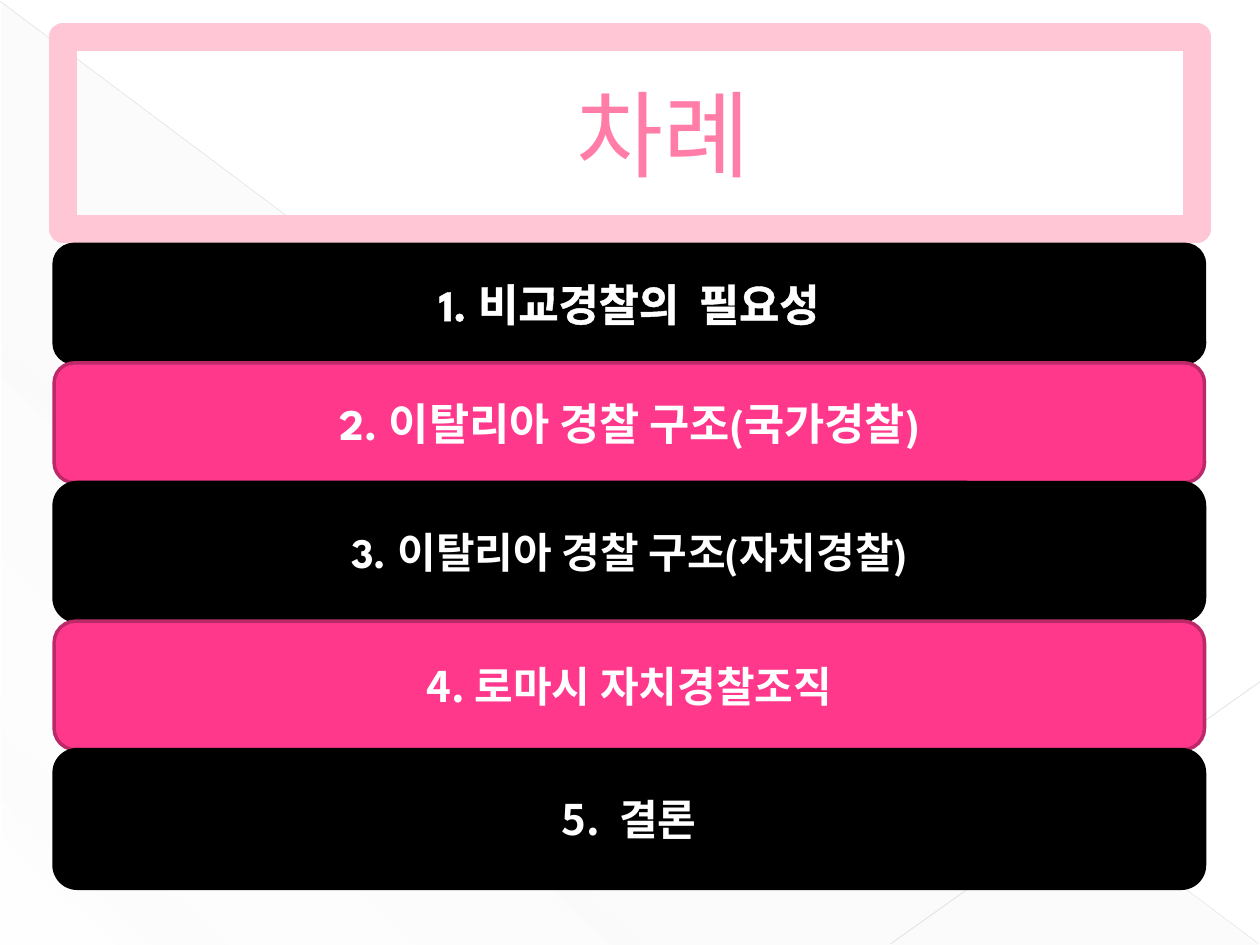
"""Builds the table-of-contents slide with a framed title and five stacked bars."""
from lxml import etree
from pptx import Presentation
from pptx import util as u
from pptx.dml.color import RGBColor
from pptx.enum import shapes, text
from pptx.oxml import parse_xml
from pptx.oxml.ns import nsdecls, qn

W, H = 10, 7.5
COLORS = {
    "black": "000000", "pink": "FF388C", "rim": "BD2968", "white": "FFFFFF",
    "frame": "FFC7D6", "title": "FF7DA7", "title_rim": "B12761",
    "shade": "D2D2D2", "ray": "BFBFBF", "ray_light": "C6C6C6",
}
LATIN, KOREAN = "League Spartan", "Noto Sans CJK KR"
BAR_LEFT, BAR_TOP, BAR_WIDTH = 0.43, 1.94, 9.13
BARS = [
    ("1. 비교경찰의  필요성", 0.94, 25, LATIN),
    ("2. 이탈리아 경찰 구조(국가경찰)", 0.95, 25, LATIN),
    ("3. 이탈리아 경찰 구조(자치경찰)", 1.1, 24, LATIN),
    ("4. 로마시 자치경찰조직", 1.02, 24, KOREAN),
    ("5.  결론", 1.1, 24, KOREAN),
]


def rgb(name):
    """Return the named colour."""
    return RGBColor.from_string(COLORS[name])


def style_line(line, color, width):
    """Give a line its colour and its width in points."""
    line.color.rgb = rgb(color)
    line.width = u.Pt(width)


def add_shade(s):
    """Add the pale triangle that fades across the slide."""
    sp = s.shapes.add_shape(shapes.MSO_SHAPE.RIGHT_TRIANGLE, u.Inches(0.01),
                            u.Inches(0.02), u.Inches(W - 0.02), u.Inches(H - 0.02))
    sp.shadow.inherit = False
    sp.line.fill.background()
    stops = "".join(
        f'<a:gs pos="{pos}000"><a:srgbClr val="{COLORS["shade"]}">'
        f'<a:alpha val="{alpha}000"/></a:srgbClr></a:gs>'
        for pos, alpha in ((0, 10), (70, 8), (100, 1)))
    sp._element.spPr.find(qn("a:prstGeom")).addnext(parse_xml(
        f'<a:gradFill {nsdecls("a")}><a:gsLst>{stops}</a:gsLst>'
        f'<a:lin ang="{133 * 60000}" scaled="0"/></a:gradFill>'))


def add_ray(s, start, end, color, width, alpha):
    """Add a thin translucent line."""
    cx = s.shapes.add_connector(shapes.MSO_CONNECTOR.STRAIGHT,
                                *map(u.Inches, start + end))
    style_line(cx.line, color, width)
    spPr = cx._element.spPr
    etree.SubElement(next(spPr.iter(qn("a:srgbClr"))), qn("a:alpha"), val=f"{alpha}000")
    etree.SubElement(spPr, qn("a:effectLst"))


def add_text(sp, words, size, font, color, bold=False, outline=None):
    """Write one centred run, with an optional outline of colour and width."""
    tf = sp.text_frame
    tf.word_wrap = True
    tf.auto_size = text.MSO_AUTO_SIZE.NONE
    tf.vertical_anchor = text.MSO_ANCHOR.MIDDLE
    p = tf.paragraphs[0]
    p.alignment = text.PP_ALIGN.CENTER
    r = p.add_run()
    r.text = words
    r.font.size, r.font.bold, r.font.name = u.Pt(size), bold, font
    r.font.color.rgb = rgb(color)
    rPr = r.font._element
    rPr.find(qn("a:latin")).addnext(
        parse_xml(f'<a:ea {nsdecls("a")} typeface="{KOREAN}"/>'))
    if outline:
        name, width = outline
        rPr.insert(0, parse_xml(
            f'<a:ln {nsdecls("a")} w="{u.Pt(width)}"><a:solidFill>'
            f'<a:srgbClr val="{COLORS[name]}"/></a:solidFill></a:ln>'))
    return p


def add_title(s, words):
    """Frame the title placeholder and bring it in front of the backdrop."""
    sp = s.shapes.title
    sp.left, sp.top, sp.width, sp.height = map(u.Inches, (0.5, 0.29, 9, 1.53))
    style_line(sp.line, "frame", 16)
    etree.SubElement(sp.line._ln, qn("a:round"))
    p = add_text(sp, words, 54, KOREAN, "title", outline=("title_rim", 0.5))
    pPr = p._p.get_or_add_pPr()
    pPr.set("marL", str(u.Inches(0.53)))
    pPr.set("indent", "0")
    s.shapes._spTree.append(sp._element)


def add_bar(s, top, height, fill, rim, words, size, font, outline):
    """Add one rounded contents bar."""
    sp = s.shapes.add_shape(shapes.MSO_SHAPE.ROUNDED_RECTANGLE,
                            *map(u.Inches, (BAR_LEFT, top, BAR_WIDTH, height)))
    sp.shadow.inherit = False
    sp.fill.solid()
    sp.fill.fore_color.rgb = rgb(fill)
    style_line(sp.line, rim, 2)
    add_text(sp, words, size, font, "white", True, outline)


def main():
    """Build and save the slide."""
    prs = Presentation()
    prs.slide_width, prs.slide_height = u.Inches(W), u.Inches(H)
    s = prs.slides.add_slide(prs.slide_layouts[5])
    add_shade(s)
    add_ray(s, (0, 0.01), (9.99, 7.49), "ray", 0.39, 35)
    add_ray(s, (W, 5.41), (7.07, 7.49), "ray_light", 0.47, 45)
    add_title(s, "차례")
    top = BAR_TOP
    for i, (words, height, size, font) in enumerate(BARS):
        fill, rim = ("pink", "rim") if i % 2 else ("black", "black")
        outline = ("white", 1.45) if i == 0 else None
        add_bar(s, top, height, fill, rim, words, size, font, outline)
        top += height
    prs.save("out.pptx")


if __name__ == "__main__":
    main()
